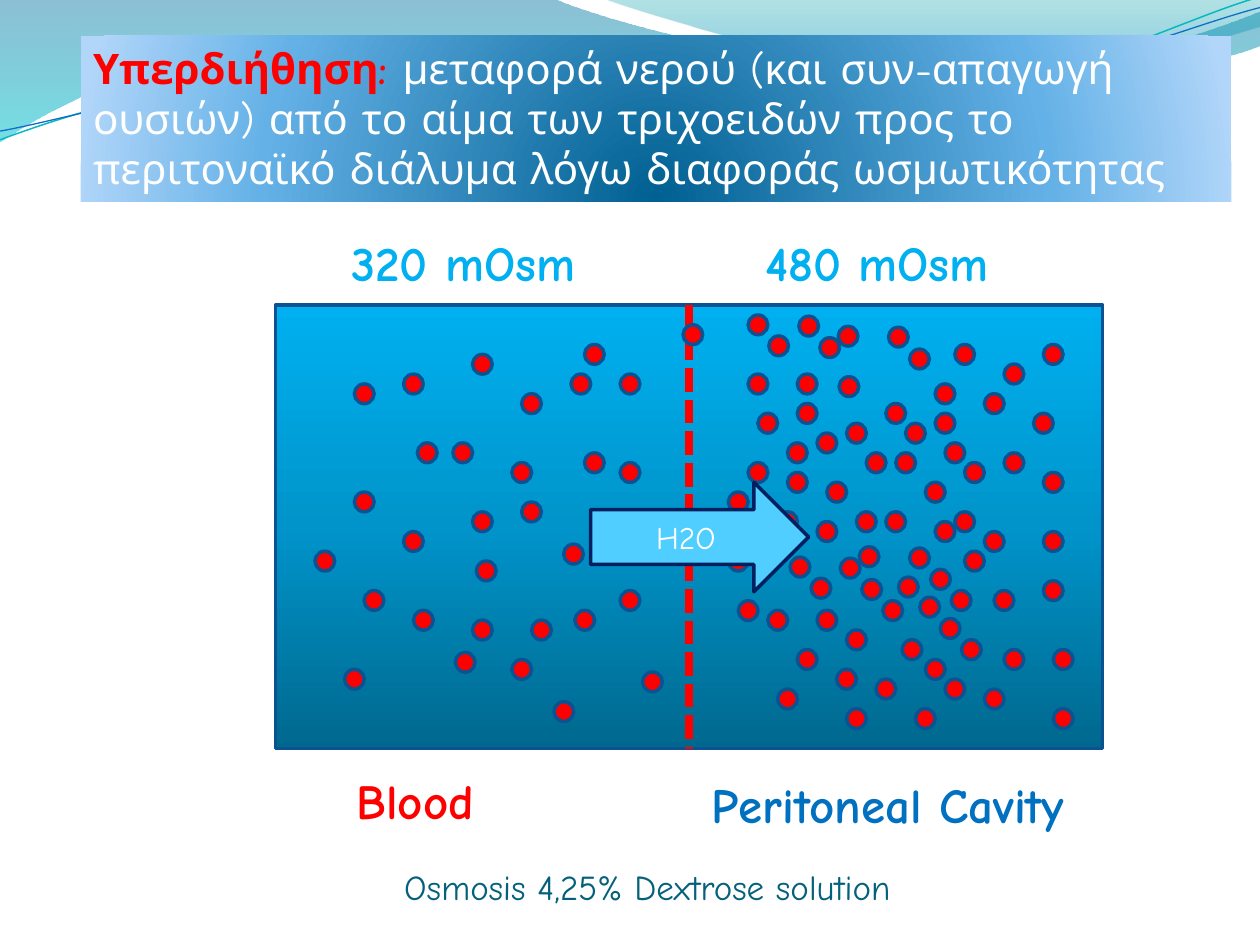
from dataclasses import dataclass

from lxml import etree
from pptx import Presentation
from pptx.dml.color import RGBColor
from pptx.enum.dml import MSO_LINE
from pptx.enum.shapes import MSO_CONNECTOR, MSO_SHAPE
from pptx.enum.text import MSO_ANCHOR, MSO_AUTO_SIZE, PP_ALIGN
from pptx.oxml import parse_xml
from pptx.oxml.ns import nsdecls, qn
from pptx.util import Pt

RECT, OVAL, ARROW = MSO_SHAPE.RECTANGLE, MSO_SHAPE.OVAL, MSO_SHAPE.RIGHT_ARROW
STRAIGHT, DASH = MSO_CONNECTOR.STRAIGHT, MSO_LINE.SQUARE_DOT
TOP, MIDDLE = MSO_ANCHOR.TOP, MSO_ANCHOR.MIDDLE
LEFT, CENTER = PP_ALIGN.LEFT, PP_ALIGN.CENTER
GROW = MSO_AUTO_SIZE.SHAPE_TO_FIT_TEXT


@dataclass(frozen=True)
class Theme:
    font: str = "Comic Neue"
    label_size: int = 28
    title_size: int = 24
    caption_size: int = 20
    arrow_size: int = 18
    red: str = "FF0000"
    white: str = "FFFFFF"
    sky: str = "00B0F0"
    blue: str = "0070C0"
    outline: str = "0B5292"
    arrow: str = "4FCEFF"
    navy: str = "002060"
    caption: str = "04617B"
    teal_line: str = "0AB8BF"
    blue_line: str = "0F6FC6"
    # Gradient stops: position %, colour, opacity %
    tank: tuple = ((0, "00688E", 100), (50, "0094CA", 100), (100, "00B0F0", 100))
    title: tuple = ((0, "006091", 100), (68, "64B1E7", 100), (100, "B1D6F9", 100))
    wide_wave: tuple = ((0, "0074A1", 45), (100, "00C6CF", 55))
    right_wave: tuple = ((0, "00A1A9", 30), (80, "008BBF", 45))


THEME = Theme()
LINEAR = '<a:lin ang="{}" scaled="0"/>'
DOWN, UP = LINEAR.format(90 * 60000), LINEAR.format(270 * 60000)
RADIAL = ('<a:path path="circle"><a:fillToRect l="50000" t="130000" '
          'r="50000" b="-30000"/></a:path>')

# Each outline is a start point, then lines (x, y) or curves (two controls, end)
WIDE_WAVE = [(0, 0), (316.8, -0.7), (342.7, 12.2, 478.1, 45.4, 545.8, 45.4),
             (614.2, 45.4, 689.8, 18.7, 720, 6.5), (720.7, 25.9),
             (707.8, 31.7, 626.4, 54.7, 537.1, 54),
             (447.8, 54, 275, 20.2, 185, 24.5), (92.9, 25.9, 33.1, 59.8, -0.7, 81.4)]
RIGHT_WAVE = [(344.9, -0.7), (366.5, 7.9, 491, 44.6, 553.7, 46.8),
              (616.3, 49.7, 691.9, 23, 720, 15.1), (720, 0)]
TEAL_CURVE = [(0, 79.9), (34.6, 67, 113.8, 41, 199.4, 37.4),
              (284.4, 33.8, 427, 64.1, 513.4, 57.6),
              (599.8, 51.1, 675.4, 10.8, 718.6, -1.4)]
BLUE_CURVE = [(0, 74.9), (33.8, 69.1, 118.1, 43.9, 203.8, 40.3),
              (290.2, 36.7, 429.8, 60.5, 516.2, 54),
              (601.9, 48.2, 677.5, 15.1, 720, 4.3)]

# Dissolved particles: top of each row, then the left of each dot in it
DOT_SIZE = 11.25
DOT_ROWS = {
    180: [427.5], 180.7: [456.5], 185.6: [390.3], 186.5: [479], 187: [507.7],
    192: [439.3], 193: [468.5], 196.9: [334, 545.6, 596.2], 199.5: [519.8],
    202.5: [270], 208.1: [573.8], 213.8: [230.6, 326.3, 354.4, 427.5, 455.6],
    215.3: [479.5], 219.4: [202.5, 534.4], 225: [298.1, 562.5],
    230.6: [455.6, 506.2], 236.2: [433.1, 534.4, 590.6], 241.9: [483.8, 517.5],
    247.5: [466.9], 253.1: [238.5, 258.8, 450, 540],
    258.8: [334, 495, 511.9, 573.8], 264.4: [292.5, 354.4, 427.5, 551.2],
    270: [450, 596.2], 275.6: [472.5, 528.8], 281.2: [202.5, 416.2],
    286.9: [298.1], 292.5: [270, 444.4, 489.4, 506.2, 545.6],
    298.1: [343.4, 466.9, 534.4], 303.8: [230.6, 562.5, 596.2], 311: [322.1],
    312.5: [491], 313.2: [519.8], 315: [180, 416.2, 551.2], 318.4: [451.5],
    319: [480.2], 320.6: [272.2], 325.4: [531.8], 329.8: [513.4], 330.5: [463.5],
    331.2: [492.5], 331.9: [596.2], 337.5: [208.1, 354.4, 543.6, 568.1],
    341.3: [525.6], 343.3: [421.9, 504.5], 348.8: [236.3, 328.5, 438.8, 466.9],
    353.5: [537.3], 354.4: [270, 303.8], 360: [483.8], 365.6: [515.5, 549.4],
    371.2: [455.6, 573.8, 601.9], 372.8: [260.2], 376.9: [292.5, 528.8],
    382.5: [196.9, 478.1], 384: [367.2], 388.1: [500.6, 540],
    393.8: [444.4, 562.5], 401: [316.6], 405: [483.8, 523.1, 601.9],
}


def rgb(value):
    return RGBColor.from_string(value)


def paint(shape, fill=None, line=None, width=2):
    shape.shadow.inherit = False
    if fill:
        shape.fill.solid()
        shape.fill.fore_color.rgb = rgb(fill)
    else:
        shape.fill.background()
    if line:
        shape.line.color.rgb = rgb(line)
        shape.line.width = Pt(width)
    else:
        shape.line.fill.background()


def paint_gradient(shape, stops, direction):
    shape.fill.gradient()
    marks = "".join(
        f'<a:gs pos="{place * 1000}"><a:srgbClr val="{color}">'
        + (f'<a:alpha val="{opacity * 1000}"/>' if opacity < 100 else "")
        + '</a:srgbClr></a:gs>'
        for place, color, opacity in stops)
    old = shape.element.spPr.find(qn("a:gradFill"))
    new = parse_xml(f'<a:gradFill {nsdecls("a")} rotWithShape="1">'
                    f'<a:gsLst>{marks}</a:gsLst>{direction}</a:gradFill>')
    old.getparent().replace(old, new)


def add_shape(page, kind, left, top, width, height, **style):
    shape = page.shapes.add_shape(kind, Pt(left), Pt(top), Pt(width), Pt(height))
    paint(shape, **style)
    return shape


def add_outline(page, outline, closed, **style):
    start, *ends = [(Pt(part[-2]), Pt(part[-1])) for part in outline]
    builder = page.shapes.build_freeform(*start)
    builder.add_line_segments(ends, close=closed)
    shape = builder.convert_to_shape()
    # Bend the straight segments that have control points
    segments = list(shape.element.spPr.iter(qn("a:lnTo")))
    for segment, part in zip(segments, outline[1:]):
        if len(part) == 6:
            points = "".join(
                f'<a:pt x="{Pt(x) - shape.left}" y="{Pt(y) - shape.top}"/>'
                for x, y in zip(part[::2], part[1::2]))
            bend = parse_xml(f'<a:cubicBezTo {nsdecls("a")}>{points}</a:cubicBezTo>')
            segment.getparent().replace(segment, bend)
    paint(shape, **style)
    return shape


def write(shape, spans, size, wrap=True, anchor=TOP, align=LEFT, grow=False):
    """Fill one paragraph with spans of (text, colour, bold)."""
    frame = shape.text_frame
    frame.word_wrap = wrap
    frame.vertical_anchor = anchor
    if grow:
        frame.auto_size = GROW
    para = frame.paragraphs[0]
    para.alignment = align
    para.font.name, para.font.size = THEME.font, Pt(size)
    for text, color, bold in spans:
        span = para.add_run()
        span.text = text
        span.font.color.rgb = rgb(color)
        span.font.bold = bold


def add_text(page, left, top, width, height, text, color, size, bold, **layout):
    box = page.shapes.add_textbox(Pt(left), Pt(top), Pt(width), Pt(height))
    write(box, [(text, color, bold)], size, **layout)


def add_membrane(page, tank):
    wall = page.shapes.add_connector(STRAIGHT, 0, 0, 0, 0)
    wall.begin_connect(tank, 0)
    wall.end_connect(tank, 2)
    wall.line.color.rgb = rgb(THEME.red)
    wall.line.width = Pt(4.5)
    wall.line.dash_style = DASH
    etree.SubElement(wall.element.spPr, qn("a:effectLst"))


def add_title(page):
    banner = add_shape(page, RECT, 46.1, 20.5, 657.6, 94.5)
    paint_gradient(banner, THEME.title, RADIAL)
    write(banner, [
        ("Υπερδιήθηση: ", THEME.red, True),
        ("μεταφορά νερού (και συν-απαγωγή ουσιών) από το αίμα των τριχοειδών "
         "προς το περιτοναϊκό διάλυμα λόγω διαφοράς ωσμωτικότητας",
         THEME.white, False)], THEME.title_size, grow=True)


def main():
    deck = Presentation()
    deck.slide_width, deck.slide_height = Pt(720), Pt(540)
    page = deck.slides.add_slide(deck.slide_layouts[6])

    # Background waves
    for outline, stops in ((WIDE_WAVE, THEME.wide_wave), (RIGHT_WAVE, THEME.right_wave)):
        paint_gradient(add_outline(page, outline, True), stops, DOWN)
    add_outline(page, TEAL_CURVE, False, line=THEME.teal_line, width=0.85)
    add_outline(page, BLUE_CURVE, False, line=THEME.blue_line, width=0.75)

    # Tank, membrane and particles
    tank = add_shape(page, RECT, 157.5, 174.4, 472.5, 253.4, line=THEME.outline)
    paint_gradient(tank, THEME.tank, UP)
    add_membrane(page, tank)
    for top, lefts in DOT_ROWS.items():
        for left in lefts:
            add_shape(page, OVAL, left, top, DOT_SIZE, DOT_SIZE,
                      fill=THEME.red, line=THEME.outline)

    # Labels above and below the two sides
    for left, top, width, text, color in (
            (193.7, 129.6, 159.1, "320 mOsm", THEME.sky),
            (430.1, 129.6, 159.1, "480 mOsm", THEME.sky),
            (196.6, 437, 86.4, "Blood", THEME.red),
            (399.6, 438.8, 245.5, "Peritoneal Cavity", THEME.blue)):
        add_text(page, left, top, width, 41, text, color, THEME.label_size, True,
                 wrap=False, grow=True)

    # Water flow and caption
    flow = add_shape(page, ARROW, 337.5, 275.6, 124.6, 62.6,
                     fill=THEME.arrow, line=THEME.navy)
    write(flow, [("H2O", THEME.white, False)], THEME.arrow_size,
          anchor=MIDDLE, align=CENTER)
    add_text(page, 223.9, 491, 343.4, 28.1, "Osmosis 4,25% Dextrose solution",
             THEME.caption, THEME.caption_size, False)

    add_title(page)
    deck.save("out.pptx")


if __name__ == "__main__":
    main()
